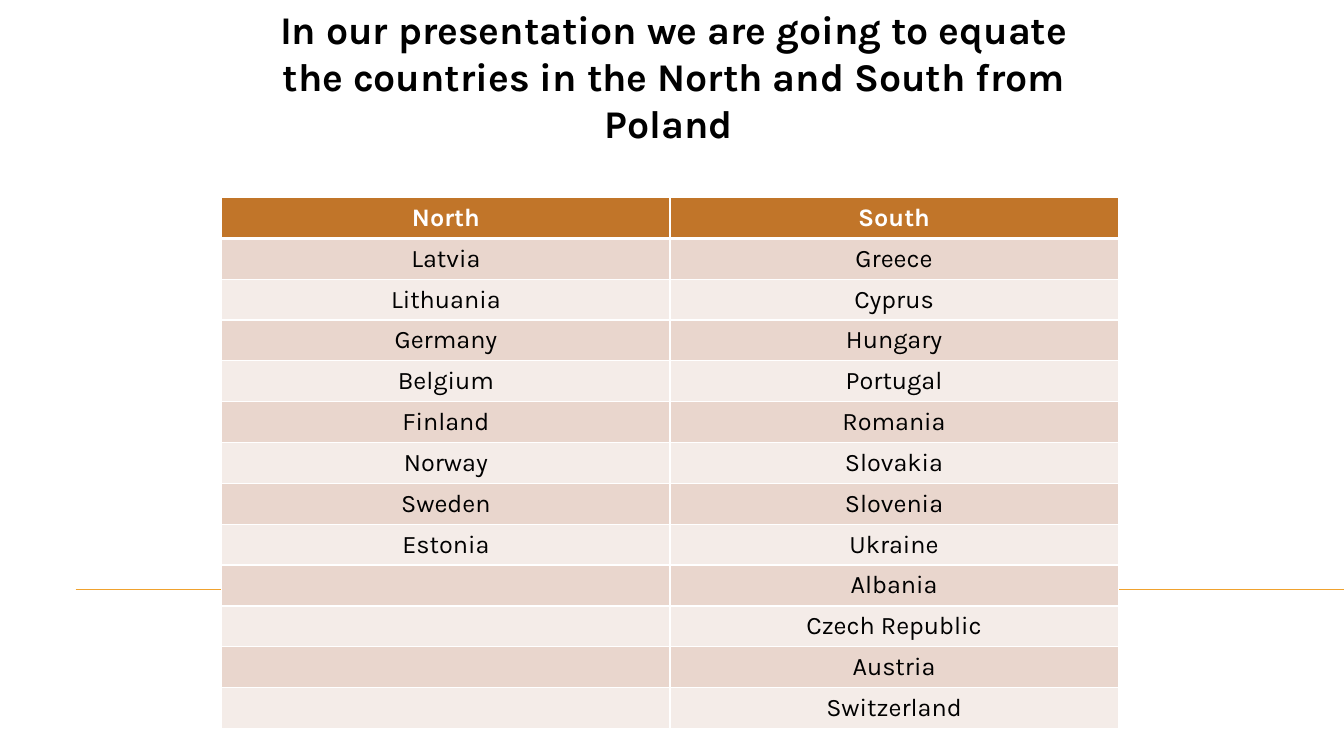
from itertools import zip_longest

from lxml import etree
from pptx import Presentation
from pptx.dml.color import RGBColor
from pptx.enum.shapes import MSO_CONNECTOR
from pptx.enum.text import MSO_ANCHOR, PP_ALIGN
from pptx.oxml.ns import qn
from pptx.util import Inches, Pt

CENTER = PP_ALIGN.CENTER
MIDDLE = MSO_ANCHOR.MIDDLE
STRAIGHT = MSO_CONNECTOR.STRAIGHT

COLORS = {
    "text": "000000",
    "white": "FFFFFF",
    "line": "F0A22E",
    "header": "C17529",
    "band_dark": "E9D6CD",
    "band_light": "F4ECE8",
}

TITLE = (
    "In our presentation we are going to equate "
    "the countries in the North and South from Poland "
)
NORTH = ["North", "Latvia", "Lithuania", "Germany", "Belgium", "Finland",
         "Norway", "Sweden", "Estonia"]
SOUTH = ["South", "Greece", "Cyprus", "Hungary", "Portugal", "Romania",
         "Slovakia", "Slovenia", "Ukraine", "Albania", "Czech Republic",
         "Austria", "Switzerland"]


class SlideBuilder:
    font = "Karla"

    def __init__(self, slide):
        self.s = slide

    def color(self, name):
        return RGBColor.from_string(COLORS[name])

    def set_text(self, tf, text, size, color, bold):
        tf.text = text
        p = tf.paragraphs[0]
        p.alignment = CENTER
        for r in p.runs:
            r.font.name = self.font
            r.font.size = Pt(size)
            r.font.bold = bold
            r.font.color.rgb = self.color(color)

    def line(self, x1, y1, x2, y2, color, width):
        ln = self.s.shapes.add_connector(
            STRAIGHT, Inches(x1), Inches(y1), Inches(x2), Inches(y2))
        ln.line.color.rgb = self.color(color)
        ln.line.width = Pt(width)
        etree.SubElement(ln._element.spPr, qn("a:effectLst"))

    def text(self, x, y, w, h, text, size, color, bold=False):
        sp = self.s.shapes.add_textbox(
            Inches(x), Inches(y), Inches(w), Inches(h))
        sp.text_frame.word_wrap = True
        self.set_text(sp.text_frame, text, size, color, bold)

    def border(self, cell, side, width):
        tc_pr = cell._tc.get_or_add_tcPr()
        ln = etree.SubElement(tc_pr, qn(f"a:ln{side}"), w=str(Pt(width)))
        fill = etree.SubElement(ln, qn("a:solidFill"))
        etree.SubElement(fill, qn("a:srgbClr"), val=COLORS["white"])

    def cell(self, cell, row, text):
        header = row == 0
        cell.vertical_anchor = MIDDLE
        widths = {"L": 1, "R": 1, "T": 3 if row == 1 else 1,
                  "B": 3 if header else 1}
        for side, width in widths.items():
            self.border(cell, side, width)
        band = "band_dark" if row % 2 else "band_light"
        cell.fill.solid()
        cell.fill.fore_color.rgb = self.color("header" if header else band)
        self.set_text(cell.text_frame, text, 18,
                      "white" if header else "text", header)

    def table(self, x, y, w, h, rows):
        table = self.s.shapes.add_table(
            len(rows), len(rows[0]),
            Inches(x), Inches(y), Inches(w), Inches(h)).table
        for i, row in enumerate(rows):
            for j, text in enumerate(row):
                self.cell(table.cell(i, j), i, text)


def main():
    prs = Presentation()
    prs.slide_width = Inches(13.33)
    prs.slide_height = Inches(7.5)
    builder = SlideBuilder(prs.slides.add_slide(prs.slide_layouts[6]))
    builder.line(0.75, 5.85, 13.33, 5.85, "line", 0.75)
    builder.text(2.34, 0, 8.68, 1.51, TITLE, 28, "text", bold=True)
    countries = list(zip_longest(NORTH, SOUTH, fillvalue=""))
    builder.table(2.2, 1.96, 8.89, 5.27, countries)
    prs.save("out.pptx")


if __name__ == "__main__":
    main()
